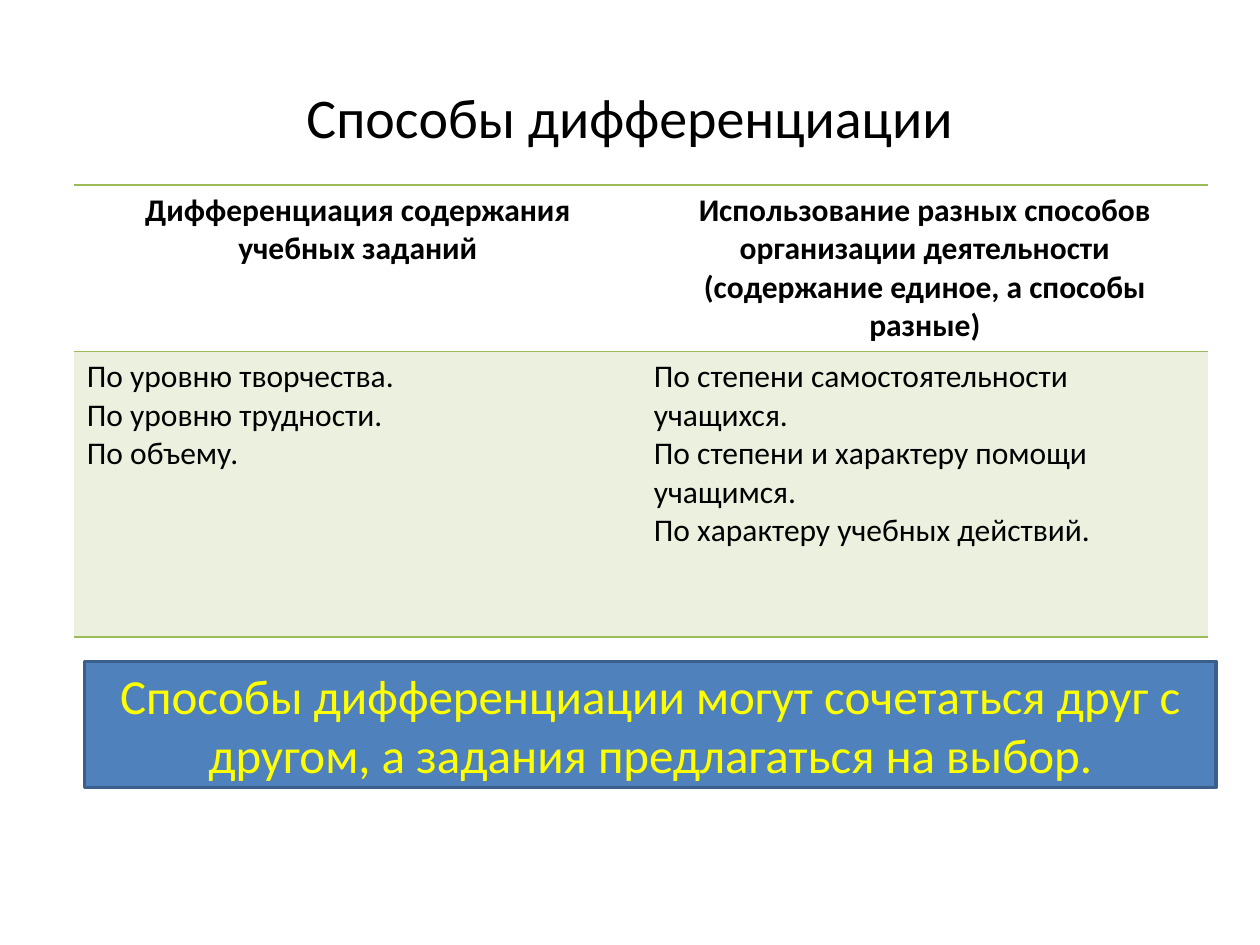
from dataclasses import dataclass

from lxml import etree
from pptx import Presentation
from pptx.dml.color import RGBColor
from pptx.enum.shapes import MSO_SHAPE
from pptx.enum.text import MSO_ANCHOR, PP_ALIGN
from pptx.oxml.ns import qn
from pptx.util import Pt

RECT = MSO_SHAPE.RECTANGLE
LEFT, CENTER = PP_ALIGN.LEFT, PP_ALIGN.CENTER
TOP, MIDDLE = MSO_ANCHOR.TOP, MSO_ANCHOR.MIDDLE
TITLE_ONLY = 5


@dataclass(frozen=True)
class Theme:
    font: str = "Calibri"
    ink: str = "000000"
    rule: str = "9BBB59"
    band: str = "EBF1DE"
    box: str = "4F81BD"
    edge: str = "3A5F8C"
    note: str = "FFFF00"
    title_size: int = 32
    cell_size: int = 18
    note_size: int = 28


THEME = Theme()

TITLE = "Способы дифференциации"
HEADS = [
    "Дифференциация содержания учебных заданий",
    "Использование разных способов организации деятельности "
    "(содержание единое, а способы разные)",
]
WAYS = [
    ["По уровню творчества.", "По уровню трудности.", "По объему."],
    [
        "По степени самостоятельности учащихся.",
        "По степени и характеру помощи учащимся.",
        "По характеру учебных действий.",
    ],
]
NOTE = ("Способы дифференциации могут сочетаться друг с другом, "
        "а задания предлагаться на выбор.")


def write(frame, lines, size, color, align=CENTER, bold=False):
    frame.word_wrap = True
    for i, line in enumerate(lines):
        para = frame.paragraphs[0] if i == 0 else frame.add_paragraph()
        para.alignment = align
        run = para.add_run()
        run.text = line
        font = run.font
        font.name, font.size, font.bold = THEME.font, Pt(size), bold
        font.color.rgb = RGBColor.from_string(color)


def add_title(slide):
    title = slide.shapes.title
    title.left, title.top = Pt(36), Pt(21.6)
    title.width, title.height = Pt(648), Pt(90)
    title.text_frame.vertical_anchor = MIDDLE
    write(title.text_frame, [TITLE], THEME.title_size, THEME.ink)


def set_rules(cell, shown):
    """Draw the named sides of a cell and hide the others."""
    props = cell._tc.get_or_add_tcPr()
    for i, side in enumerate("LRTB"):
        line = etree.Element(qn(f"a:ln{side}"), w=str(Pt(1)))
        if side in shown:
            fill = etree.SubElement(line, qn("a:solidFill"))
            etree.SubElement(fill, qn("a:srgbClr"), val=THEME.rule)
        else:
            etree.SubElement(line, qn("a:noFill"))
        props.insert(i, line)


def fill_cell(cell, lines, head):
    cell.vertical_anchor = TOP
    if head:
        cell.fill.background()
    else:
        cell.fill.solid()
        cell.fill.fore_color.rgb = RGBColor.from_string(THEME.band)
    set_rules(cell, "TB")
    write(cell.text_frame, lines, THEME.cell_size, THEME.ink,
          CENTER if head else LEFT, head)


def add_grid(slide):
    frame = slide.shapes.add_table(2, 2, Pt(42.5), Pt(105.8), Pt(648), Pt(258))
    table = frame.table
    for row, height in zip(table.rows, (95, 163)):
        row.height = Pt(height)
    for col, (head, ways) in enumerate(zip(HEADS, WAYS)):
        table.columns[col].width = Pt(324)
        fill_cell(table.cell(0, col), [head], True)
        fill_cell(table.cell(1, col), ways, False)


def add_note(slide):
    box = slide.shapes.add_shape(RECT, Pt(48.2), Pt(378), Pt(646.6), Pt(72))
    box.shadow.inherit = False
    box.fill.solid()
    box.fill.fore_color.rgb = RGBColor.from_string(THEME.box)
    box.line.color.rgb = RGBColor.from_string(THEME.edge)
    box.line.width = Pt(2)
    box.text_frame.vertical_anchor = MIDDLE
    write(box.text_frame, [NOTE], THEME.note_size, THEME.note)


def main():
    deck = Presentation()
    deck.slide_width, deck.slide_height = Pt(720), Pt(540)
    slide = deck.slides.add_slide(deck.slide_layouts[TITLE_ONLY])
    add_title(slide)
    add_grid(slide)
    add_note(slide)
    deck.save("out.pptx")


if __name__ == "__main__":
    main()
